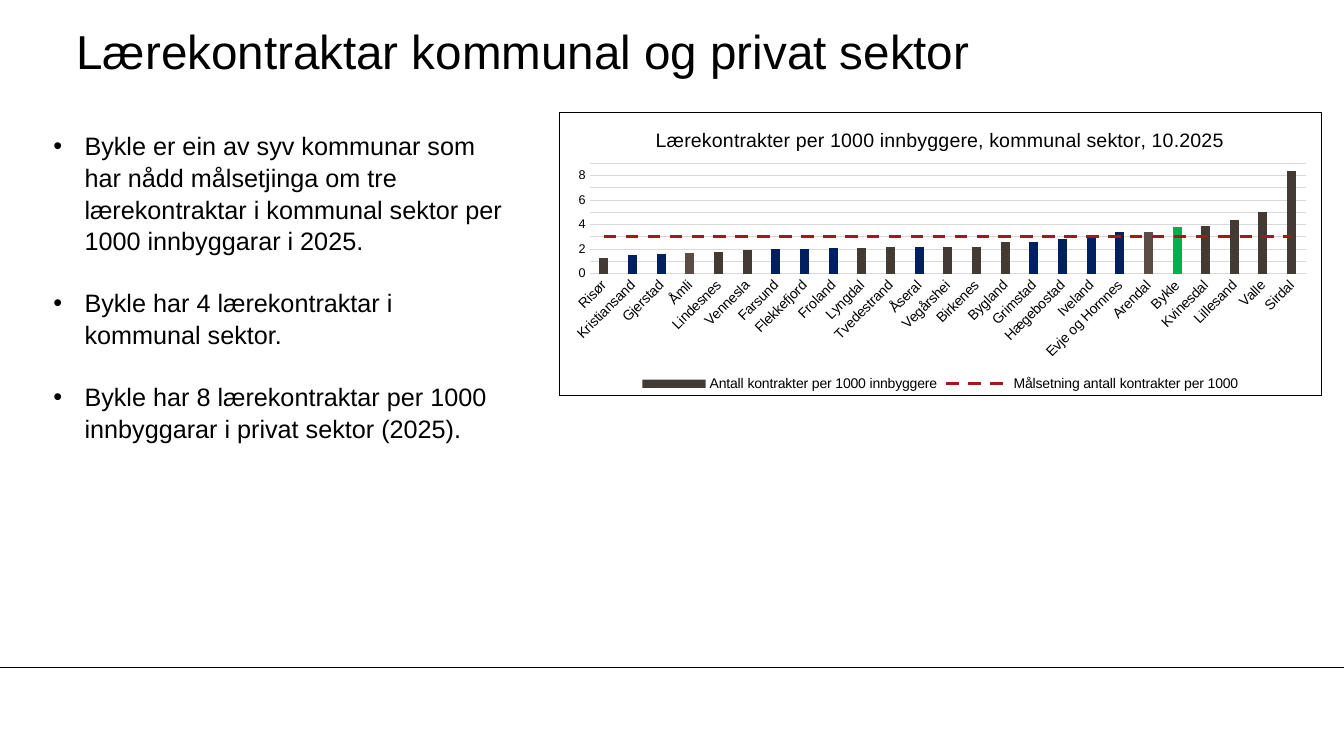
from dataclasses import dataclass

from lxml.etree import SubElement
from pptx import Presentation
from pptx.chart.data import CategoryChartData
from pptx.dml.color import RGBColor
from pptx.enum.chart import XL_CHART_TYPE, XL_LEGEND_POSITION, XL_MARKER_STYLE, XL_TICK_MARK
from pptx.enum.dml import MSO_LINE
from pptx.enum.shapes import MSO_CONNECTOR
from pptx.enum.text import MSO_ANCHOR
from pptx.oxml import parse_xml
from pptx.oxml.ns import nsdecls, qn
from pptx.util import Inches, Pt


@dataclass(frozen=True)
class Theme:
    font: str = "Arial"
    ink: str = "000000"
    grid: str = "D9D9D9"
    bar: str = "443A34"
    light_bar: str = "5B4D46"
    blue: str = "002060"
    green: str = "00B050"
    target: str = "A71716"
    title_size: float = 34
    body_size: float = 18
    chart_title_size: float = 14
    label_size: float = 10
    value_size: float = 9
    hairline: float = 0.75
    target_width: float = 2.25


THEME = Theme()

CONTRACTS = {
    "Risør": 1.3, "Kristiansand": 1.5, "Gjerstad": 1.6, "Åmli": 1.7, "Lindesnes": 1.8,
    "Vennesla": 1.9, "Farsund": 2, "Flekkefjord": 2, "Froland": 2.1, "Lyngdal": 2.1,
    "Tvedestrand": 2.2, "Åseral": 2.2, "Vegårshei": 2.2, "Birkenes": 2.2, "Bygland": 2.6,
    "Grimstad": 2.6, "Hægebostad": 2.8, "Iveland": 2.9, "Evje og Hornnes": 3.4,
    "Arendal": 3.4, "Bykle": 3.8, "Kvinesdal": 3.9, "Lillesand": 4.4, "Valle": 5, "Sirdal": 8.4,
}
TARGET = 3
HIGHLIGHTS = {
    THEME.blue: ["Kristiansand", "Gjerstad", "Farsund", "Flekkefjord", "Froland", "Åseral",
                 "Grimstad", "Hægebostad", "Iveland", "Evje og Hornnes"],
    THEME.light_bar: ["Åmli", "Arendal"],
    THEME.green: ["Bykle"],
}
POINTS = [
    "Bykle er ein av syv kommunar som har nådd målsetjinga om tre lærekontraktar "
    "i kommunal sektor per 1000 innbyggarar i 2025.",
    "Bykle har 4 lærekontraktar i kommunal sektor.",
    "Bykle har 8 lærekontraktar per 1000 innbyggarar i privat sektor (2025).",
]


def style_font(font, size, color=THEME.ink):
    font.name = THEME.font
    font.size = Pt(size)
    font.bold = False
    font.color.rgb = RGBColor.from_string(color)


def style_line(line, color, width):
    line.color.rgb = RGBColor.from_string(color)
    line.width = Pt(width)


def write(para, text, size, color=THEME.ink, bullet=None, indent=0.31, before=0, spacing=1):
    if bullet:
        properties = para._p.get_or_add_pPr()
        properties.set("marL", str(Inches(indent)))
        properties.set("indent", str(-Inches(indent)))
        SubElement(properties, qn("a:buFont")).set("typeface", THEME.font)
        SubElement(properties, qn("a:buChar")).set("char", bullet)
        para.line_spacing = spacing
    if before:
        para.space_before = Pt(before)
    span = para.add_run()
    span.text = text
    style_font(span.font, size, color)


class SlideBuilder:
    def __init__(self, page, theme):
        self.page = page
        self.theme = theme

    def rule(self, left, top, right):
        line = self.page.shapes.add_connector(
            MSO_CONNECTOR.STRAIGHT, Inches(left), Inches(top), Inches(right), Inches(top))
        style_line(line.line, self.theme.ink, self.theme.hairline)
        SubElement(line._element.spPr, qn("a:effectLst"))

    def text_box(self, left, top, width, height):
        box = self.page.shapes.add_textbox(
            Inches(left), Inches(top), Inches(width), Inches(height))
        box.text_frame.word_wrap = True
        return box.text_frame

    def title(self, text, *place):
        frame = self.text_box(*place)
        frame.vertical_anchor = MSO_ANCHOR.MIDDLE
        frame.margin_left = frame.margin_right = frame.margin_top = frame.margin_bottom = 0
        write(frame.paragraphs[0], text, self.theme.title_size)

    def bullets(self, items, *place):
        frame = self.text_box(*place)
        for index, item in enumerate(items):
            para = frame.add_paragraph() if index else frame.paragraphs[0]
            write(para, item, self.theme.body_size, bullet="•",
                  before=21.6 if index else 0, spacing=1.05)

    def chart(self, heading, left, top, width, height):
        data = CategoryChartData(number_format="0.0")
        data.categories = list(CONTRACTS)
        data.add_series("Antall kontrakter per 1000 innbyggere", list(CONTRACTS.values()))
        data.add_series("Målsetning antall kontrakter per 1000", [TARGET] * len(CONTRACTS))
        chart = self.page.shapes.add_chart(
            XL_CHART_TYPE.COLUMN_CLUSTERED, Inches(left), Inches(top),
            Inches(width), Inches(height), data).chart
        style_font(chart.font, self.theme.label_size)
        chart.has_title = True
        write(chart.chart_title.text_frame.paragraphs[0], heading, self.theme.chart_title_size)
        chart.has_legend = True
        chart.legend.position = XL_LEGEND_POSITION.BOTTOM
        chart.legend.include_in_layout = False
        style_font(chart.legend.font, self.theme.label_size)
        self.axes(chart)
        self.columns(chart.plots[0])
        self.target_line(chart)
        self.frame_chart(chart)

    def axes(self, chart):
        names, values = chart.category_axis, chart.value_axis
        for axis, size in ((names, self.theme.label_size), (values, self.theme.value_size)):
            axis.major_tick_mark = axis.minor_tick_mark = XL_TICK_MARK.NONE
            style_font(axis.tick_labels.font, size)
        style_line(names.format.line, self.theme.grid, self.theme.hairline)
        names._element.find(qn("c:txPr")).find(qn("a:bodyPr")).set("rot", "-2700000")
        values.minimum_scale, values.maximum_scale, values.major_unit = 0, 9, 1
        values.tick_labels.number_format = "0"
        values.tick_labels.number_format_is_linked = False
        values.format.line.fill.background()
        style_line(values.major_gridlines.format.line, self.theme.grid, self.theme.hairline)

    def columns(self, plot):
        plot.gap_width, plot.overlap, plot.vary_by_categories = 219, -27, False
        series = plot.series[0]
        series.invert_if_negative = False
        self.fill(series, self.theme.bar)
        places = list(CONTRACTS)
        for color, names in HIGHLIGHTS.items():
            for name in names:
                self.fill(series.points[places.index(name)], color)

    def fill(self, part, color):
        part.format.fill.solid()
        part.format.fill.fore_color.rgb = RGBColor.from_string(color)

    def target_line(self, chart):
        bars = chart.plots[0]._element
        series = bars.findall(qn("c:ser"))[1]
        for flag in series.findall(qn("c:invertIfNegative")):
            series.remove(flag)
        lines = parse_xml(
            f'<c:lineChart {nsdecls("c")}><c:grouping val="standard"/>'
            '<c:varyColors val="0"/><c:marker val="1"/></c:lineChart>')
        lines.insert(2, series)
        for axis in bars.findall(qn("c:axId")):
            SubElement(lines, qn("c:axId")).set("val", axis.get("val"))
        bars.addnext(lines)
        target = chart.plots[1].series[0]
        target.smooth = False
        target.marker.style = XL_MARKER_STYLE.NONE
        style_line(target.format.line, self.theme.target, self.theme.target_width)
        target.format.line.dash_style = MSO_LINE.DASH

    def frame_chart(self, chart):
        area = chart._chartSpace.chart.plotArea
        for layout in area.findall(qn("c:layout")):
            area.remove(layout)
        sides = {"x": 0.04, "y": 0.18, "w": 0.94, "h": 0.39}
        modes = '<c:layoutTarget val="inner"/><c:xMode val="edge"/><c:yMode val="edge"/>'
        sizes = "".join(f'<c:{side} val="{share}"/>' for side, share in sides.items())
        area.insert(0, parse_xml(
            f'<c:layout {nsdecls("c")}><c:manualLayout>{modes}{sizes}</c:manualLayout></c:layout>'))
        chart._chartSpace.chart.addnext(parse_xml(
            f'<c:spPr {nsdecls("c", "a")}><a:noFill/><a:ln w="{Pt(self.theme.hairline)}">'
            f'<a:solidFill><a:srgbClr val="{self.theme.ink}"/></a:solidFill></a:ln></c:spPr>'))


def main():
    deck = Presentation()
    deck.slide_width, deck.slide_height = Inches(13.33), Inches(7.5)
    builder = SlideBuilder(deck.slides.add_slide(deck.slide_layouts[6]), THEME)
    builder.rule(0, 6.62, 13.33)
    builder.title("Lærekontraktar kommunal og privat sektor", 0.76, 0.13, 11.1, 0.75)
    builder.bullets(POINTS, 0.43, 1.23, 4.75, 3.43)
    builder.chart("Lærekontrakter per 1000 innbyggere, kommunal sektor, 10.2025",
                  5.54, 1.11, 7.57, 2.82)
    deck.save("out.pptx")


if __name__ == "__main__":
    main()
